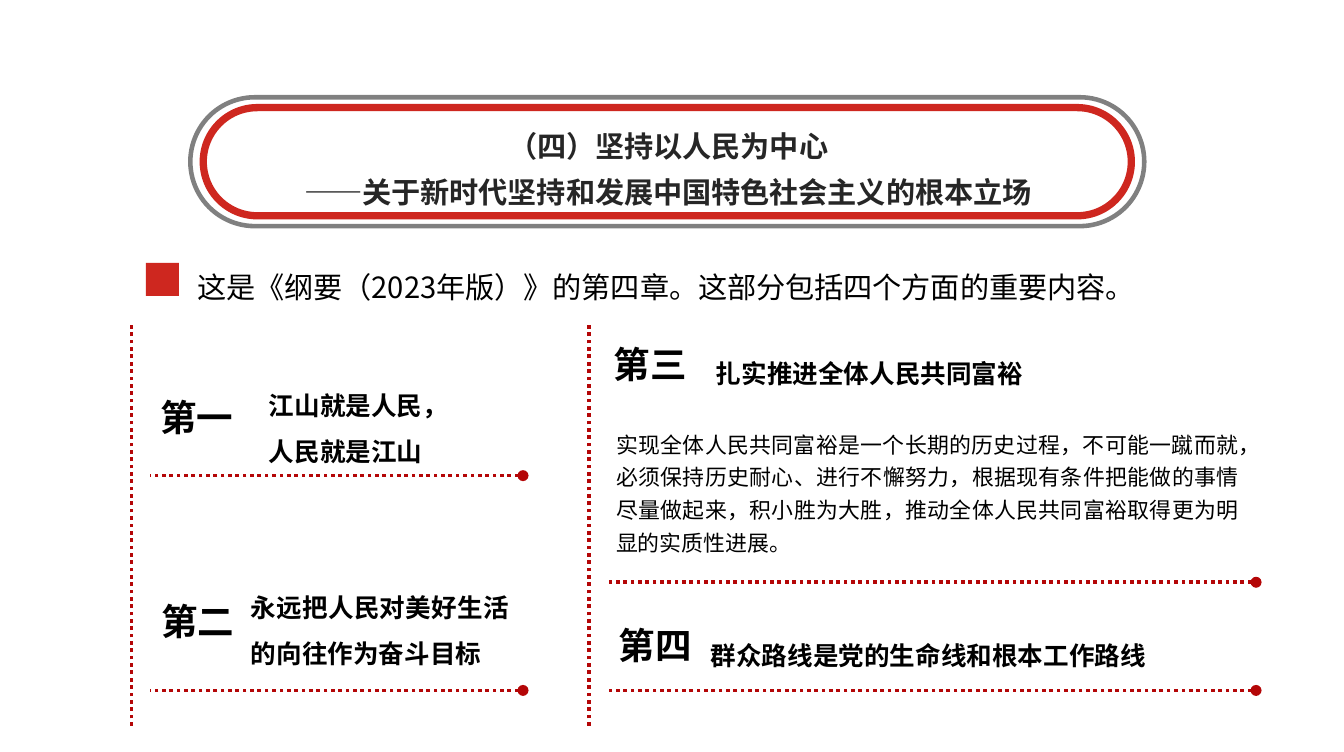
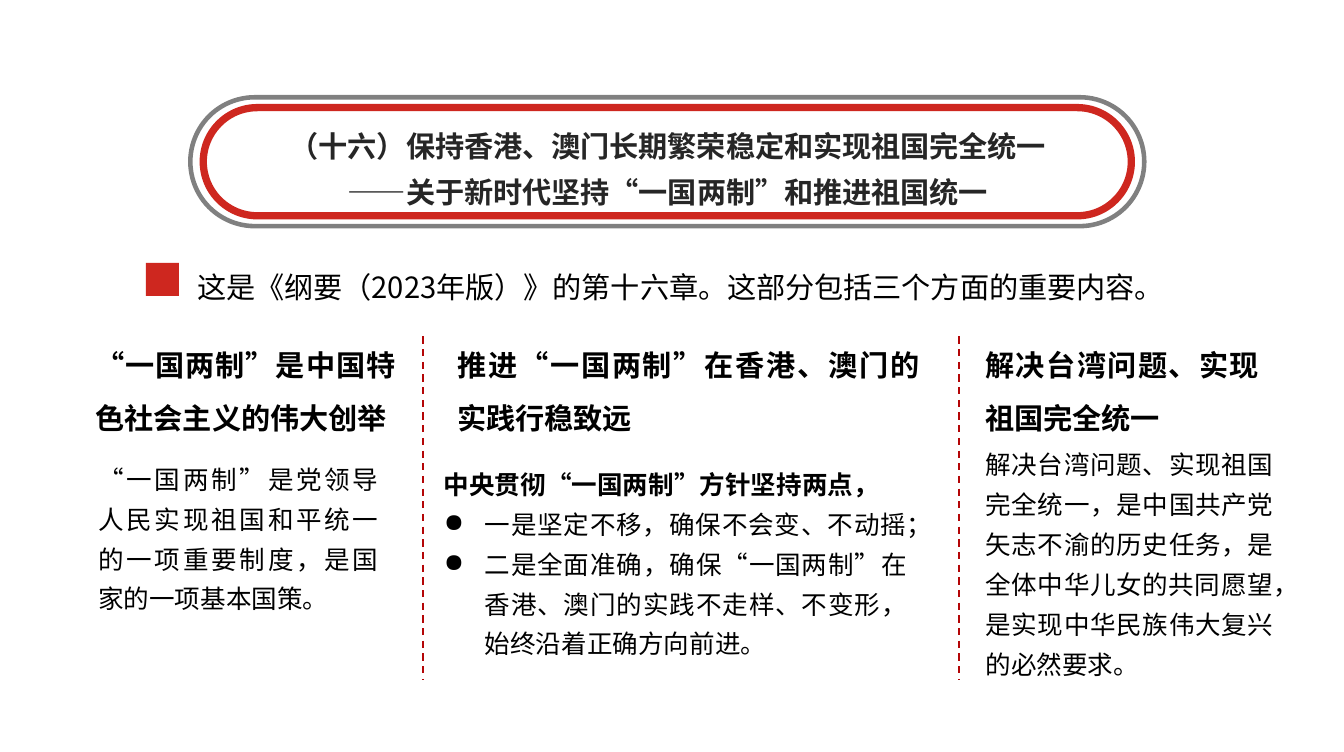
from lxml.etree import SubElement
from pptx import Presentation
from pptx.dml.color import RGBColor
from pptx.enum.dml import MSO_LINE
from pptx.enum.lang import MSO_LANGUAGE_ID
from pptx.enum.shapes import MSO_CONNECTOR, MSO_SHAPE
from pptx.enum.text import MSO_AUTO_SIZE, PP_ALIGN
from pptx.oxml.ns import qn
from pptx.util import Cm, Pt

COLORS = {"red": "CE271F", "rule": "B40607", "gray": "808080",
          "title": "262626", "text": "000000"}
SANS, SERIF = "Noto Sans CJK SC", "Times New Roman"


def style(size, bold=False, gap=1.5, align=PP_ALIGN.JUSTIFY, name=SANS, color="text"):
    return {"font": {"size": Pt(size), "bold": bold, "name": name,
                     "language_id": MSO_LANGUAGE_ID.SIMPLIFIED_CHINESE},
            "para": {"alignment": align, "line_spacing": gap},
            "color": color}


STYLES = {
    "title": style(16, True, 1.3, PP_ALIGN.CENTER, color="title"),
    "lead": style(16),
    "tag": style(20, True, 1.0, PP_ALIGN.LEFT),
    "claim": style(14, True),
    "head": style(16, True),
    "note": style(12, gap=1.25, name=SERIF),
    "body": style(14, gap=1.3, name=SERIF),
    "strong": style(14, True, 1.3, name=SERIF),
}


def apply(item, values):
    for key, value in values.items():
        setattr(item, key, value)


def rgb(name):
    return RGBColor.from_string(COLORS[name])


def bullet(para):
    props = para._p.get_or_add_pPr()
    props.set("marL", str(Cm(0.79)))
    props.set("indent", str(-Cm(0.79)))
    SubElement(props, qn("a:buChar")).set("char", "●")


def write(slide, box, kind, lines, wrap=True, dots=False):
    frame = slide.shapes.add_textbox(*map(Cm, box)).text_frame
    apply(frame, {"word_wrap": wrap, "auto_size": MSO_AUTO_SIZE.SHAPE_TO_FIT_TEXT})
    if kind == "tag":
        apply(frame, {"margin_left": Cm(0.2), "margin_right": Cm(0.2),
                      "margin_top": Cm(0.1), "margin_bottom": Cm(0.1)})
    for i, line in enumerate(lines):
        para = frame.paragraphs[0] if i == 0 else frame.add_paragraph()
        look = STYLES["strong" if dots and i == 0 else kind]
        apply(para, look["para"])
        if dots and i:
            bullet(para)
        run = para.add_run()
        run.text = line
        apply(run.font, look["font"])
        run.font.color.rgb = rgb(look["color"])
        SubElement(run._r.get_or_add_rPr(), qn("a:ea")).set("typeface", SANS)


def rule(slide, start, end, width=2, dash=MSO_LINE.ROUND_DOT, oval=False):
    line = slide.shapes.add_connector(MSO_CONNECTOR.STRAIGHT, *map(Cm, start + end))
    line.line.color.rgb = rgb("rule")
    apply(line.line, {"width": Pt(width), "dash_style": dash})
    if oval:
        SubElement(line.line._get_or_add_ln(), qn("a:headEnd")).set("type", "oval")
    SubElement(line._element.spPr, qn("a:effectLst"))


def banner(slide, box, lines):
    x, y, w, h = box
    group = slide.shapes.add_group_shape()
    for dx, dy, color, width in ((0, 0, "gray", 2.5), (0.25, 0.2, "red", 4)):
        ring = group.shapes.add_shape(
            MSO_SHAPE.ROUNDED_RECTANGLE,
            *map(Cm, (x + dx, y + dy, w - 2 * dx, h - 2 * dy)))
        ring.adjustments[0] = 0.5
        ring.shadow.inherit = False
        ring.fill.background()
        ring.line.color.rgb = rgb(color)
        ring.line.width = Pt(width)
    write(slide, (x + 0.64, y + 0.28, w - 1.24, 1.9), "title", lines)


def lead(slide, box, line):
    x, y, w, h = box
    mark = slide.shapes.add_shape(
        MSO_SHAPE.RECTANGLE, *map(Cm, (x, y + 0.33, 0.64, 0.64)))
    mark.shadow.inherit = False
    mark.fill.solid()
    mark.fill.fore_color.rgb = rgb("red")
    mark.line.fill.background()
    write(slide, (x + 0.74, y, w - 0.74, h), "lead", [line])


def points(slide, box, items):
    x, y, w, h = box
    rule(slide, (x, y + h), (x, y))
    for tag, spot, lines, area, base in items:
        rule(slide, (x + w, y + base), (x + 0.36, y + base), oval=True)
        write(slide, (x + spot[0], y + spot[1], 1.83, 1.04), "tag", [tag], wrap=False)
        write(slide, (x + area[0], y + area[1], *area[2:]), "claim", lines)


def column(slide, box, head, lines, shift, width):
    x, y, w, h = box
    write(slide, (x, y, w, 2.16), "head", [head])
    write(slide, (x + shift[0], y + shift[1], width, h - shift[1]), "body", lines,
          dots=len(lines) > 1)


def page(deck, title, intro):
    slide = deck.slides.add_slide(deck.slide_layouts[6])
    banner(slide, (3.68, 1.88, 18.44, 2.49), title)
    lead(slide, (2.82, 4.75, 20.81, 1.12), intro)
    return slide


def people(deck):
    slide = page(deck, ["（四）坚持以人民为中心",
                        "——关于新时代坚持和发展中国特色社会主义的根本立场"],
                 "这是《纲要（2023年版）》的第四章。这部分包括四个方面的重要内容。")
    points(slide, (2.54, 6.25, 7.57, 7.77), [
        ("第一", (0.36, 1.29), ["江山就是人民，", "人民就是江山"],
         (2.41, 0.86, 4.45, 1.9), 2.94),
        ("第二", (0.38, 5.23), ["永远把人民对美好生活的向往作为奋斗目标"],
         (2.06, 4.77, 5.49, 1.9), 7.09)])
    points(slide, (11.38, 6.25, 12.9, 7.77), [
        ("第三", (0.28, 0.25), ["扎实推进全体人民共同富裕"],
         (2.21, 0.25, 8.13, 1.02), 5),
        ("第四", (0.38, 5.69), ["群众路线是党的生命线和根本工作路线"],
         (2.11, 5.69, 10.8, 1.02), 7.09)])
    write(slide, (11.66, 8.08, 12.55, 2.77), "note", [
        "实现全体人民共同富裕是一个长期的历史过程，不可能一蹴而就，"
        "必须保持历史耐心、进行不懈努力，根据现有条件把能做的事情尽量做起来，"
        "积小胜为大胜，推动全体人民共同富裕取得更为明显的实质性进展。"])


def union(deck):
    slide = page(deck, ["（十六）保持香港、澳门长期繁荣稳定和实现祖国完全统一",
                        "——关于新时代坚持“一国两制”和推进祖国统一"],
                 "这是《纲要（2023年版）》的第十六章。这部分包括三个方面的重要内容。")
    for x in (8.18, 18.54):
        rule(slide, (x, 6.5), (x, 13.13), 1, MSO_LINE.DASH)
    column(slide, (1.6, 6.25, 6.3, 5.69), "“一国两制”是中国特色社会主义的伟大创举",
           ["“一国两制”是党领导人民实现祖国和平统一的一项重要制度，是国家的一项基本国策。"],
           (0.05, 2.41), 5.92)
    column(slide, (8.59, 6.25, 9.45, 6.57), "推进“一国两制”在香港、澳门的实践行稳致远",
           ["中央贯彻“一国两制”方针坚持两点，",
            "一是坚定不移，确保不会变、不动摇；",
            "二是全面准确，确保“一国两制”在香港、澳门的实践不走样、不变形，"
            "始终沿着正确方向前进。"],
           (-0.26, 2.51), 9.45)
    column(slide, (18.8, 6.25, 5.79, 6.98), "解决台湾问题、实现祖国完全统一",
           ["解决台湾问题、实现祖国完全统一，是中国共产党矢志不渝的历史任务，"
            "是全体中华儿女的共同愿望，是实现中华民族伟大复兴的必然要求。"],
           (0, 2.13), 6.07)


def main():
    deck = Presentation()
    apply(deck, {"slide_width": Cm(25.98), "slide_height": Cm(14.53)})
    people(deck)
    union(deck)
    deck.save("out.pptx")


if __name__ == "__main__":
    main()
